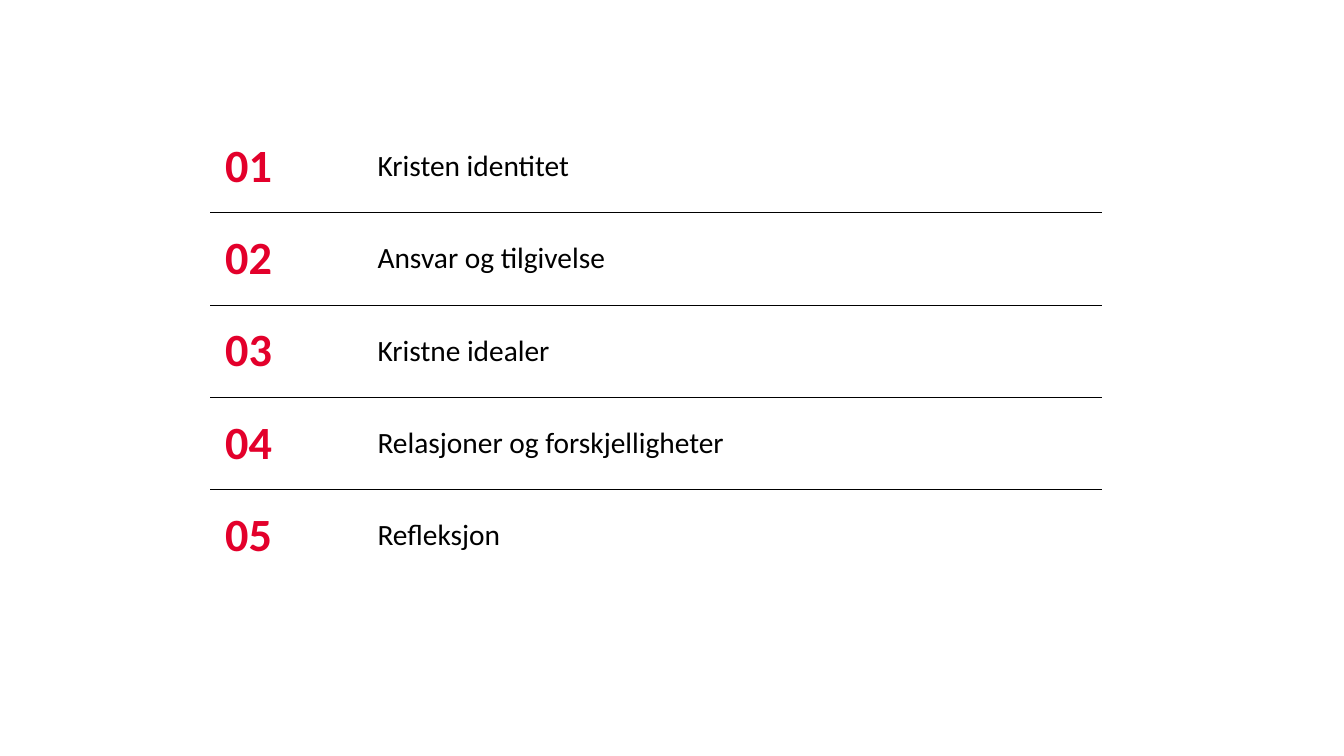
from lxml import etree
from pptx import Presentation, util as u
from pptx.dml.color import RGBColor
from pptx.enum import text
from pptx.oxml import ns

PX = u.Inches(1) // 240
NO_STYLE = "{2D5ABB26-0587-4C30-8999-92F81FD0307C}"
TOPICS = [
    "Kristen identitet",
    "Ansvar og tilgivelse",
    "Kristne idealer",
    "Relasjoner og forskjelligheter",
    "Refleksjon",
]


def px(length):
    """Turn pixels into EMU."""
    return u.Emu(length * PX)


def color(value):
    """Turn a hex string into a colour."""
    return RGBColor.from_string(value)


def write(frame, wording, size, ink, bold=False, font="Calibri"):
    """Put formatted wording into a text frame."""
    run = frame.paragraphs[0].add_run()
    run.text = wording
    run.font.name = font
    run.font.size = u.Pt(size)
    run.font.bold = bold
    run.font.color.rgb = color(ink)


class Agenda:
    """Hold the style and the slide of a numbered agenda."""

    red, black = "E3002B", "000000"
    padding, rule_width = 36, 0.5

    def __init__(self, slide):
        """Keep the slide to draw on."""
        self.slide = slide

    def rule(self, cell, side):
        """Draw a thin line along one side of a cell."""
        properties = cell._tc.get_or_add_tcPr()
        line = etree.SubElement(properties, ns.qn(f"a:ln{side}"), w=str(u.Pt(self.rule_width)))
        fill = etree.SubElement(line, ns.qn("a:solidFill"))
        etree.SubElement(fill, ns.qn("a:srgbClr"), val=self.black)

    def cell(self, cell, wording, sides, **style):
        """Fill one cell with wording and rules."""
        cell.margin_left = cell.margin_right = px(self.padding)
        cell.margin_top = cell.margin_bottom = px(self.padding)
        cell.vertical_anchor = text.MSO_ANCHOR.MIDDLE
        for side in sides:
            self.rule(cell, side)
        cell.fill.background()
        write(cell.text_frame, wording, **style)

    def table(self, topics, left, top, widths, row_height):
        """Draw the topics as numbered rows with rules between them."""
        frame = self.slide.shapes.add_table(
            len(topics), len(widths), px(left), px(top),
            px(sum(widths)), px(row_height * len(topics)))
        table = frame.table
        table.first_row = table.horz_banding = False
        table._tbl.tblPr.find(ns.qn("a:tableStyleId")).text = NO_STYLE
        for column, width in zip(table.columns, widths):
            column.width = px(width)
        for index, topic in enumerate(topics):
            table.rows[index].height = px(row_height)
            sides = ("T" if index else "") + ("B" if index < len(topics) - 1 else "")
            self.cell(table.cell(index, 0), f"{index + 1:02}", sides,
                      size=33, ink=self.red, bold=True)
            self.cell(table.cell(index, 1), topic, sides, size=21, ink=self.black)


def main():
    """Build and save the agenda slide."""
    deck = Presentation()
    deck.slide_width, deck.slide_height = px(3200), px(1800)
    agenda = Agenda(deck.slides.add_slide(deck.slide_layouts[6]))
    agenda.table(TOPICS, left=500, top=286, widths=(363, 1760), row_height=220)
    deck.save("out.pptx")


if __name__ == "__main__":
    main()
